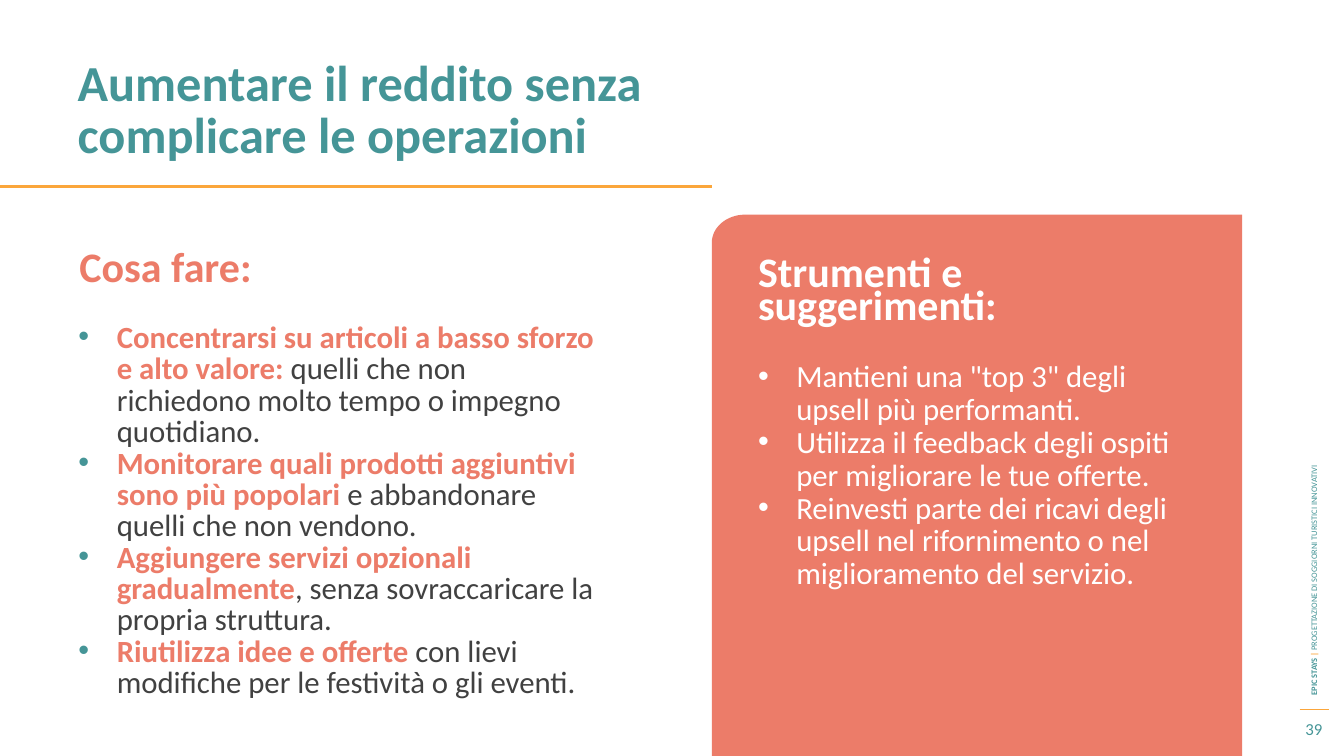
from math import cos, pi, sin

from lxml.etree import SubElement
from pptx import Presentation
from pptx.dml.color import RGBColor
from pptx.enum.shapes import MSO_CONNECTOR
from pptx.enum.text import MSO_ANCHOR, MSO_AUTO_SIZE, PP_ALIGN
from pptx.oxml.ns import qn
from pptx.util import Inches, Pt

TEAL, CORAL, ORANGE = "459597", "EC7C69", "FBA63B"
GREY, WHITE = "414141", "FFFFFF"


def color(value):
    return RGBColor.from_string(value)


def write(paragraph, pieces, size, spacing=None, bullet=None):
    if bullet:
        properties = paragraph._p.get_or_add_pPr()
        properties.set("marL", str(Inches(0.38)))
        properties.set("indent", str(-Inches(0.38)))
        bullet_color = SubElement(properties, qn("a:buClr"))
        SubElement(bullet_color, qn("a:srgbClr"), val=bullet)
        SubElement(properties, qn("a:buFont"), typeface="Arial")
        SubElement(properties, qn("a:buChar"), char="•")
    if spacing:
        paragraph.line_spacing = Pt(spacing)
    for text, text_color, bold in pieces:
        run = paragraph.add_run()
        run.text = text
        run.font.name = "Calibri"
        run.font.size = Pt(size)
        run.font.bold = bold
        run.font.color.rgb = color(text_color)


presentation = Presentation()
presentation.slide_width = Inches(13.33)
presentation.slide_height = Inches(7.5)
slide = presentation.slides.add_slide(presentation.slide_layouts[5])
shapes = slide.shapes

title = shapes.title
title.left, title.top = Inches(0.67), Inches(0.54)
title.width, title.height = Inches(7.48), Inches(0.88)
title.text_frame.word_wrap = True
title.text_frame.auto_size = MSO_AUTO_SIZE.NONE
title.text_frame.vertical_anchor = MSO_ANCHOR.TOP
title_paragraph = title.text_frame.paragraphs[0]
title_paragraph.alignment = PP_ALIGN.LEFT
write(title_paragraph, [("Aumentare il reddito senza complicare le operazioni", TEAL, True)], 36, 37.2)

for start, end, y, width in [(0, 7.06, 1.85, 1.5), (12.89, 13.18, 7.04, 0.75)]:
    rule = shapes.add_connector(
        MSO_CONNECTOR.STRAIGHT, Inches(start), Inches(y), Inches(end), Inches(y)
    )
    rule.line.color.rgb = color(ORANGE)
    rule.line.width = Pt(width)
    SubElement(rule._element.spPr, qn("a:effectLst"))

left, top, right, bottom = 7.06, 2.13, 12.32, 7.5
radius_x, radius_y = 0.33, 0.28
corner = [
    (left + radius_x * (1 - cos(step * pi / 32)), top + radius_y * (1 - sin(step * pi / 32)))
    for step in range(17)
]
outline = [(right, bottom), (left, bottom)] + corner
builder = shapes.build_freeform(Inches(right), Inches(top))
builder.add_line_segments([(Inches(x), Inches(y)) for x, y in outline])
panel = builder.convert_to_shape()
panel.shadow.inherit = False
panel.fill.solid()
panel.fill.fore_color.rgb = color(CORAL)
panel.line.fill.background()

frames = []
for x, y, width, height in [
    (0.69, 2.43, 6.14, 0.88),
    (0.68, 3.16, 5.41, 4),
    (7.42, 2.56, 4.33, 3.59),
    (12.93, 1.23, 0.2, 5.77),
    (12.77, 7.06, 0.52, 0.34),
]:
    box = shapes.add_textbox(Inches(x), Inches(y), Inches(width), Inches(height))
    box.text_frame.word_wrap = True
    frames.append(box.text_frame)
heading_frame, action_frame, tip_frame, project_frame, number_frame = frames

write(heading_frame.paragraphs[0], [("Cosa fare:", CORAL, True)], 30, 29)

actions = [
    ("Concentrarsi su articoli a basso sforzo e alto valore: ",
     "quelli che non richiedono molto tempo o impegno quotidiano."),
    ("Monitorare quali prodotti aggiuntivi sono più popolari ",
     "e abbandonare quelli che non vendono."),
    ("Aggiungere servizi opzionali gradualmente",
     ", senza sovraccaricare la propria struttura."),
    ("Riutilizza idee e offerte ",
     "con lievi modifiche per le festività o gli eventi."),
]
for index, (lead, detail) in enumerate(actions):
    paragraph = action_frame.add_paragraph() if index else action_frame.paragraphs[0]
    write(paragraph, [(lead, CORAL, True), (detail, GREY, False)], 22, 22.4, TEAL)

tips = [
    'Mantieni una "top 3" degli upsell più performanti.',
    "Utilizza il feedback degli ospiti per migliorare le tue offerte.",
    "Reinvesti parte dei ricavi degli upsell nel rifornimento o nel miglioramento del servizio.",
]
write(tip_frame.paragraphs[0], [("Strumenti e suggerimenti:", WHITE, True)], 30, 23.4)
for tip in tips:
    write(tip_frame.add_paragraph(), [(tip, WHITE, False)], 22, 23.4, WHITE)
tip_frame.paragraphs[1].space_before = Pt(23.4)

project_frame._txBody.bodyPr.set("vert", "vert270")
project_frame.margin_left = project_frame.margin_right = Inches(0.05)
project_frame.margin_top = project_frame.margin_bottom = Inches(0.1)
project_pieces = [
    ("EPIC STAYS ", TEAL, True),
    ("| ", ORANGE, True),
    ("PROGETTAZIONE DI SOGGIORNI TURISTICI INNOVATIVI", TEAL, False),
]
write(project_frame.paragraphs[0], project_pieces, 6)
number_paragraph = number_frame.paragraphs[0]
number_paragraph.alignment = PP_ALIGN.CENTER
write(number_paragraph, [("39", TEAL, False)], 12)
for frame in (project_frame, number_frame):
    frame.vertical_anchor = MSO_ANCHOR.MIDDLE

presentation.save("out.pptx")
